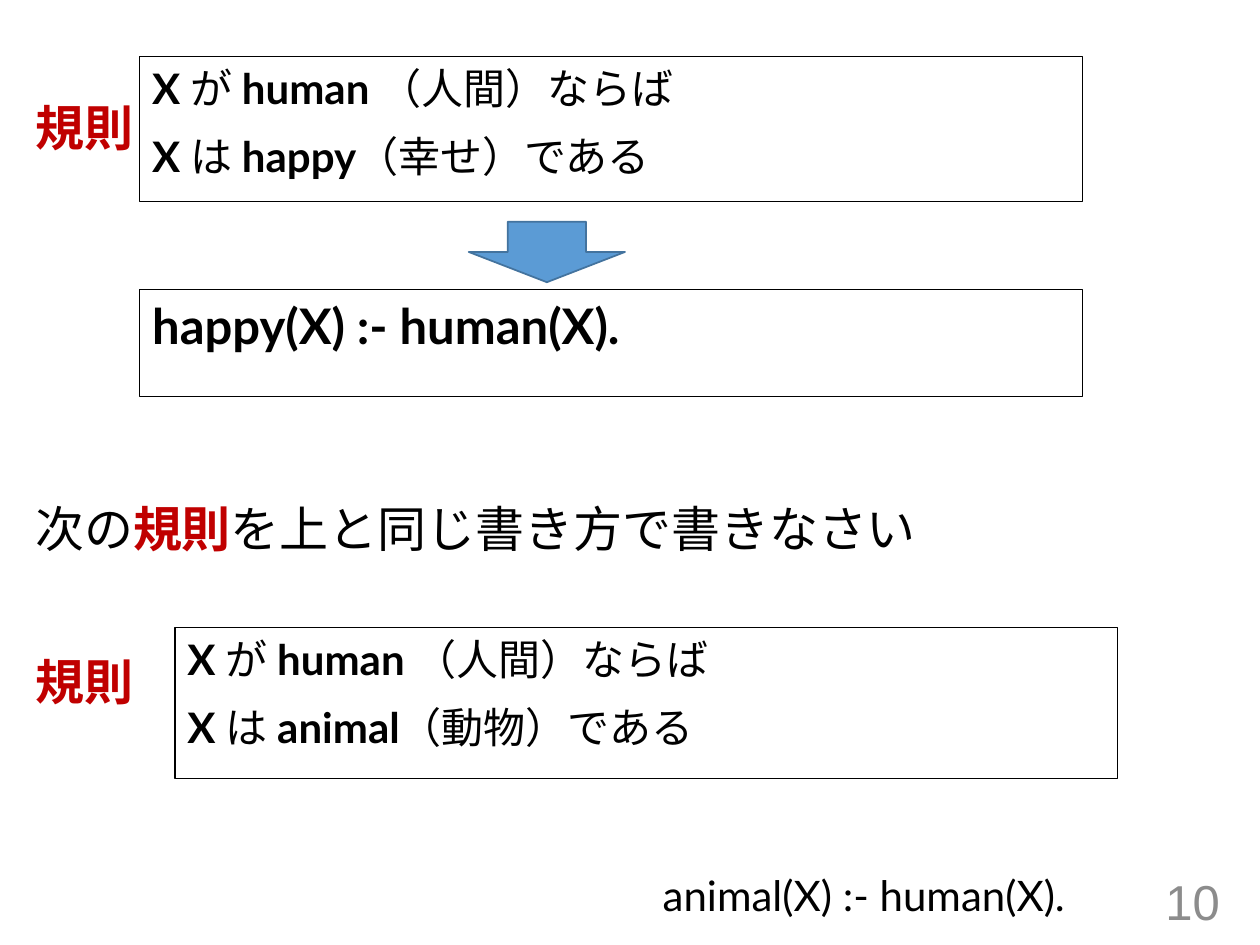
from pptx import Presentation
from pptx.dml.color import RGBColor
from pptx.enum.shapes import MSO_SHAPE
from pptx.enum.text import MSO_ANCHOR, MSO_AUTO_SIZE, PP_ALIGN
from pptx.util import Cm, Pt

RECTANGLE, DOWN_ARROW = MSO_SHAPE.RECTANGLE, MSO_SHAPE.DOWN_ARROW
TOP, MIDDLE = MSO_ANCHOR.TOP, MSO_ANCHOR.MIDDLE
LEFT, RIGHT = PP_ALIGN.LEFT, PP_ALIGN.RIGHT
GROW = MSO_AUTO_SIZE.SHAPE_TO_FIT_TEXT

BLACK = RGBColor(0x00, 0x00, 0x00)
RED = RGBColor(0xC0, 0x00, 0x00)
GRAY = RGBColor(0x8C, 0x8C, 0x8C)
BLUE = RGBColor(0x5B, 0x9B, 0xD5)
DARK_BLUE = RGBColor(0x43, 0x73, 0x9E)

LATIN = {"name": "Lato", "size": Pt(24), "color": BLACK, "bold": False}
LATIN_BOLD = {**LATIN, "bold": True}
CODE = {**LATIN_BOLD, "size": Pt(28)}
JAPANESE = {**LATIN, "name": "Noto Sans CJK JP", "size": Pt(28)}
KEYWORD = {**JAPANESE, "color": RED, "bold": True}
PAGE_NUMBER = {**LATIN, "name": "Arial", "size": Pt(28), "color": GRAY}

BOX_WIDTH = Cm(19)
MARGIN = Cm(0.46)


def write(frame, lines, align=LEFT, space_before=Pt(0)):
    """Fill a text frame with lines, each a list of (text, format) pairs."""
    for index, line in enumerate(lines):
        paragraph = frame.add_paragraph() if index else frame.paragraphs[0]
        paragraph.alignment = align
        paragraph.space_before = space_before
        for text, style in line:
            run = paragraph.add_run()
            run.text = text
            for key, value in style.items():
                if key == "color":
                    run.font.color.rgb = value
                else:
                    setattr(run.font, key, value)


def add_framed_box(slide, left, top, height, lines):
    box = slide.shapes.add_shape(RECTANGLE, left, top, BOX_WIDTH, height)
    box.shadow.inherit = False
    box.fill.background()
    box.line.color.rgb = BLACK
    box.line.width = Pt(0.75)
    box.text_frame.word_wrap = True
    box.text_frame.vertical_anchor = TOP
    write(box.text_frame, lines, space_before=Pt(10))


def add_label(slide, left, top, width, height, line, space_before=Pt(0)):
    frame = slide.shapes.add_textbox(left, top, width, height).text_frame
    frame.word_wrap = False
    frame.auto_size = GROW
    write(frame, [line], space_before=space_before)


def add_down_arrow(slide, left, top, width, height):
    arrow = slide.shapes.add_shape(DOWN_ARROW, left, top, width, height)
    arrow.shadow.inherit = False
    arrow.fill.solid()
    arrow.fill.fore_color.rgb = BLUE
    arrow.line.color.rgb = DARK_BLUE
    arrow.line.width = Pt(1)


def add_page_number(slide, number):
    frame = slide.shapes.add_textbox(Cm(19.13), Cm(17.65), Cm(5.71), Cm(1.02)).text_frame
    frame.word_wrap = True
    frame.vertical_anchor = MIDDLE
    write(frame, [[(number, PAGE_NUMBER)]], align=RIGHT)


def rule_lines(conclusion, meaning):
    return [
        [("X ", LATIN_BOLD), ("が ", LATIN), ("human ", LATIN_BOLD), ("（人間）ならば", LATIN)],
        [("X ", LATIN_BOLD), ("は ", LATIN), (conclusion, LATIN_BOLD),
         (f"（{meaning}）である", LATIN)],
    ]


def main():
    presentation = Presentation()
    presentation.slide_width, presentation.slide_height = Cm(25.4), Cm(19.05)
    slide = presentation.slides.add_slide(presentation.slide_layouts[6])

    add_page_number(slide, "10")
    add_framed_box(slide, Cm(2.82), Cm(1.14), Cm(2.92), rule_lines("happy", "幸せ"))
    add_framed_box(slide, Cm(2.82), Cm(5.84), Cm(2.16), [[("happy(X) :- human(X).", CODE)]])
    add_label(slide, MARGIN, Cm(9.93), Cm(18.47), Cm(1.45), [
        ("次の", JAPANESE), ("規則", KEYWORD), ("を上と同じ書き方で書きなさい", JAPANESE)])
    add_down_arrow(slide, Cm(9.45), Cm(4.47), Cm(3.15), Cm(1.22))
    add_framed_box(slide, Cm(3.53), Cm(12.65), Cm(3.05), rule_lines("animal", "動物"))
    add_label(slide, Cm(13.11), Cm(17.4), Cm(8.89), Cm(1.27),
              [("animal(X) :- human(X).", LATIN)], space_before=Pt(10))
    for top in (Cm(1.85), Cm(13)):
        add_label(slide, MARGIN, top, Cm(2.51), Cm(1.45), [("規則", KEYWORD)])

    presentation.save("out.pptx")


if __name__ == "__main__":
    main()
